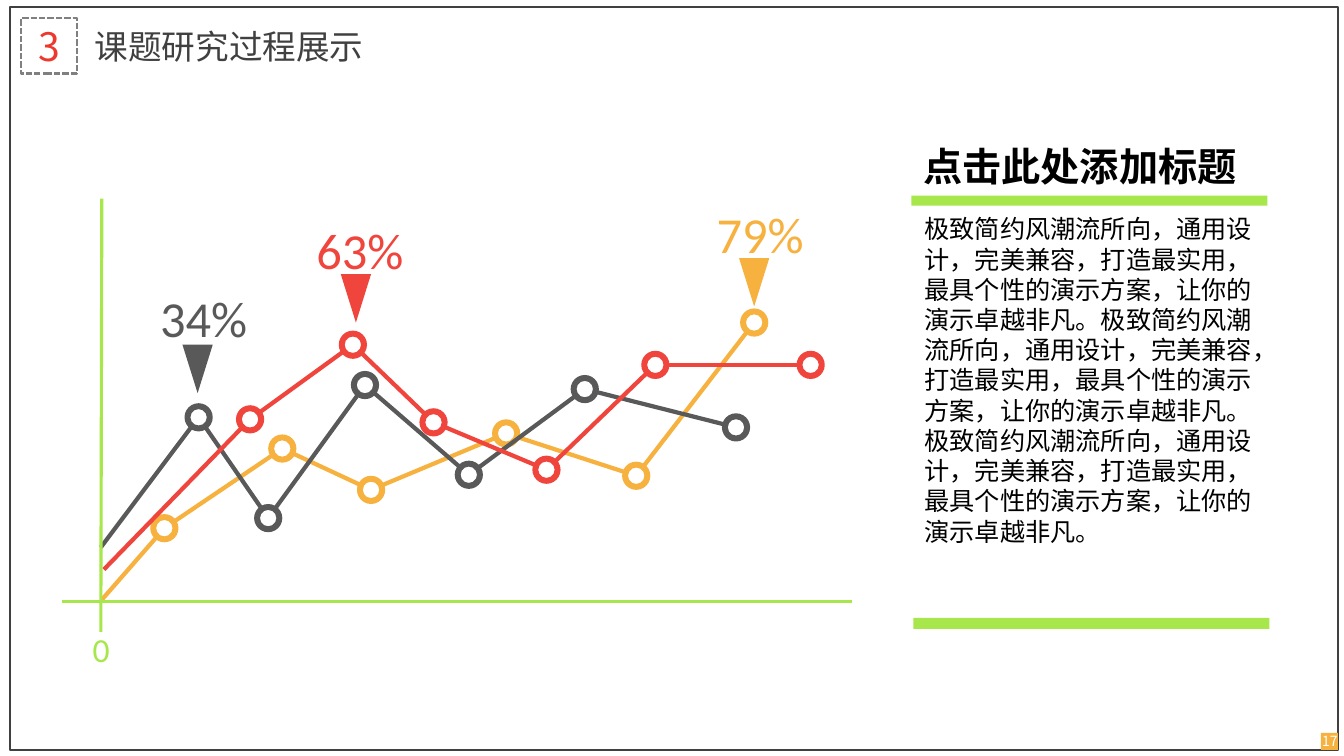
from itertools import pairwise
from math import dist

from lxml.etree import SubElement
from pptx import Presentation
from pptx.dml.color import RGBColor
from pptx.enum.dml import MSO_LINE
from pptx.enum.shapes import MSO_CONNECTOR, MSO_SHAPE
from pptx.enum.text import MSO_ANCHOR, PP_ALIGN
from pptx.oxml.ns import qn
from pptx.util import Inches, Pt

RED = RGBColor(0xEF, 0x45, 0x3D)
GOLD = RGBColor(0xF7, 0xB1, 0x3F)
GREY = RGBColor(0x59, 0x59, 0x59)
GREEN = RGBColor(0xA8, 0xE7, 0x4B)
DARK = RGBColor(0x40, 0x40, 0x40)
DASH = RGBColor(0x80, 0x80, 0x80)
DIGIT = RGBColor(0xED, 0x38, 0x2D)
BLACK = RGBColor(0x00, 0x00, 0x00)
WHITE = RGBColor(0xFF, 0xFF, 0xFF)

HAN = "Noto Sans CJK SC"
LATIN = "Calibri"
PITCH = 0.1
RING = 2.8
TRIM = 1.1

SERIES = [
    (GOLD, (10.1, 59.5),
     [(16.3, 52.4), (28, 44.5), (36.8, 48.6), (50.2, 43), (63.1, 47.2), (74.8, 32)],
     (73.3, 25.6)),
    (GREY, (10, 54.3),
     [(19.7, 41.4), (26.6, 51.4), (36.2, 38.2), (46.5, 47.1), (58, 38.6), (73, 42.4)],
     (18.1, 34.2)),
    (RED, (10.3, 56.5),
     [(24.8, 41.6), (35, 34.2), (43, 41.9), (54.2, 46.6), (65, 36.2), (80.4, 36.2)],
     (33.8, 27.2)),
]
SHARES = [
    ("34%", GREY, (14.9, 28, 11, 7.1)),
    ("79%", GOLD, (70.1, 19.7, 11.7, 7.1)),
    ("63%", RED, (30.4, 21.2, 11.1, 7.1)),
]
SLOGAN = (
    "极致简约风潮流所向，通用设计，完美兼容，打造最实用，"
    "最具个性的演示方案，让你的演示卓越非凡。"
)


def cell(n):
    return Inches(n * PITCH)


def toward(a, b, gap):
    share = gap / dist(a, b)
    return tuple(p + (q - p) * share for p, q in zip(a, b))


class Board:
    def __init__(self, deck):
        self.slide = deck.slides.add_slide(deck.slide_layouts[6])
        self.shapes = self.slide.shapes

    def shape(self, kind, box, fill=None, line=None, width=1):
        item = self.shapes.add_shape(kind, *map(cell, box))
        item.shadow.inherit = False
        if fill is None:
            item.fill.background()
        else:
            item.fill.solid()
            item.fill.fore_color.rgb = fill
        if line is None:
            item.line.fill.background()
        else:
            item.line.color.rgb = line
            item.line.width = Pt(width)
        return item

    def label(self, item, words, size, color, font=HAN, align=PP_ALIGN.LEFT,
              anchor=MSO_ANCHOR.TOP, bold=False, wrap=True, inset=None, lead=None):
        frame = item.text_frame
        frame.word_wrap = wrap
        frame.vertical_anchor = anchor
        if inset is not None:
            frame.margin_left = frame.margin_right = cell(inset)
            frame.margin_top = frame.margin_bottom = cell(inset)
        para = frame.paragraphs[0]
        para.alignment = align
        if lead:
            para.line_spacing = Pt(lead)
        run = para.add_run()
        run.text = words
        run.font.size = Pt(size)
        run.font.name = font
        run.font.bold = bold
        run.font.color.rgb = color
        SubElement(run.font._element, qn("a:ea")).set("typeface", font)

    def text(self, box, *words, **style):
        self.label(self.shapes.add_textbox(*map(cell, box)), *words, **style)

    def line(self, start, end, color, width):
        item = self.shapes.add_connector(
            MSO_CONNECTOR.STRAIGHT, *map(cell, (*start, *end)))
        item.line.color.rgb = color
        item.line.width = Pt(width)
        SubElement(item._element.spPr, qn("a:effectLst"))

    def ring(self, spot, color):
        x, y = spot
        item = self.shape(
            MSO_SHAPE.DONUT, (x - RING / 2, y - RING / 2, RING, RING), color)
        item.adjustments[0] = 0.21

    def series(self, color, start, spots, tip):
        arrow = self.shape(MSO_SHAPE.ISOSCELES_TRIANGLE, (*tip, 3, 4.8), color)
        arrow.rotation = 180
        for spot in spots:
            self.ring(spot, color)
        for a, b in pairwise([start, *spots]):
            head = a if a == start else toward(a, b, TRIM)
            self.line(head, toward(b, a, TRIM), color, 3)


def main():
    deck = Presentation()
    deck.slide_width, deck.slide_height = Inches(13.33), Inches(7.5)
    board = Board(deck)
    mid = {"align": PP_ALIGN.CENTER, "anchor": MSO_ANCHOR.MIDDLE}

    board.shape(MSO_SHAPE.RECTANGLE, (1, 0.7, 131.7, 73.7), line=DARK)
    badge = board.shape(
        MSO_SHAPE.RECTANGLE, (2.1, 1.8, 5.5, 5.5), line=DASH, width=1.5)
    badge.line.dash_style = MSO_LINE.SQUARE_DOT
    board.label(badge, "3", 28, DIGIT, inset=0, **mid)
    board.text((8.4, 1.8, 35.9, 5.5), "课题研究过程展示", 24, DARK,
               anchor=MSO_ANCHOR.MIDDLE)
    board.shape(MSO_SHAPE.RECTANGLE, (131, 72.7, 1.7, 1.7), GOLD)
    board.text((129.7, 72.7, 4.4, 1.7), "17", 10, WHITE, **mid)

    for row in SERIES:
        board.series(*row)
    for words, color, box in SHARES:
        board.text(box, words, 36, color, font=LATIN)

    board.line((10.1, 19.7), (10, 62.7), GREEN, 2.25)
    board.line((6.2, 59.7), (84.5, 59.7), GREEN, 2.25)
    board.text((8.2, 61.9, 3.7, 5.1), "0", 24, GREEN, font=LATIN, wrap=False)

    board.shape(MSO_SHAPE.RECTANGLE, (90.4, 19.4, 35.3, 1), GREEN)
    board.shape(MSO_SHAPE.RECTANGLE, (90.6, 61.3, 35.3, 1.1), GREEN)
    board.text((90.6, 13.3, 35.3, 5.7), "点击此处添加标题", 28, BLACK,
               bold=True, lead=36)
    board.text((90.7, 20.7, 35.7, 34.3), SLOGAN * 3, 18, BLACK, lead=21.6)

    deck.save("out.pptx")


if __name__ == "__main__":
    main()
